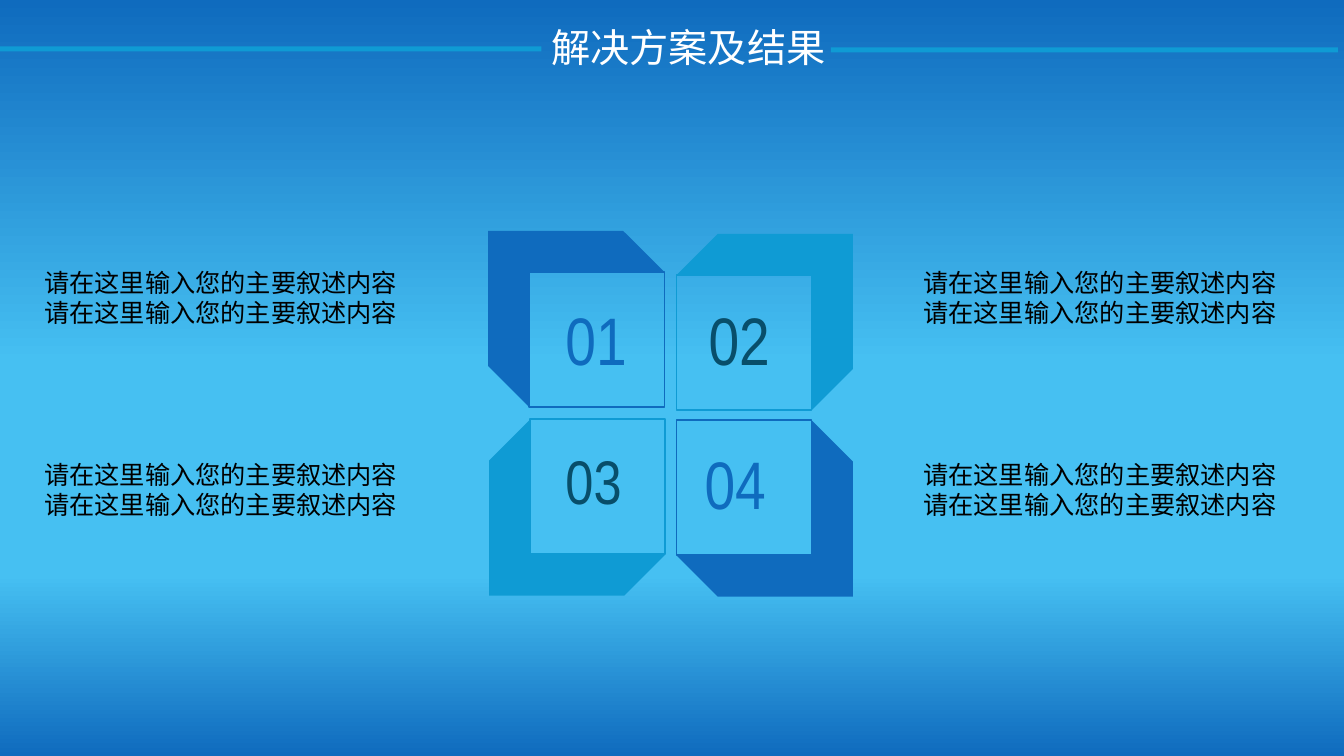
from lxml import etree
from pptx import Presentation
from pptx.dml.color import RGBColor
from pptx.enum.shapes import MSO_SHAPE
from pptx.oxml.ns import qn
from pptx.util import Inches, Pt

RECTANGLE = MSO_SHAPE.RECTANGLE
CJK_FONT = "Noto Sans CJK SC"
NUMERAL_FONT = "Arial Narrow"
BLUE, TEAL, DARK_TEAL = "0F6BBE", "0F9BD4", "084E6A"
BACKGROUND_STOPS = [(0, BLUE), (48, "46C0F2"), (76, "46C0F2"), (100, BLUE)]

BAND = 0.41      # thickness of a petal's folded band
WINDOW = 1.34    # side of a petal's open square
PETAL = BAND + WINDOW

# left, top, outer corner (right, bottom), band colour, numeral, its colour, size and offset
PETALS = [
    (4.84, 2.29, (0, 0), BLUE, "01", BLUE, 48, (0.67, 0.62)),
    (6.71, 2.32, (1, 0), TEAL, "02", DARK_TEAL, 48, (0.22, 0.59)),
    (4.85, 4.16, (0, 1), TEAL, "03", DARK_TEAL, 44, (0.66, 0.18)),
    (6.71, 4.17, (1, 1), BLUE, "04", BLUE, 48, (0.18, 0.17)),
]
CAPTION_COLUMNS = (0.34, 9.06)
CAPTION_ROWS = (2.6, 4.51)
CAPTION_LINES = ["请在这里输入您的主要叙述内容"] * 2


def color(hex_string):
    return RGBColor.from_string(hex_string)


def paint(shape, fill=None, line=None):
    shape.shadow.inherit = False
    if fill:
        shape.fill.solid()
        shape.fill.fore_color.rgb = color(fill)
    else:
        shape.fill.background()
    if line:
        shape.line.color.rgb = color(line)
        shape.line.width = Pt(1.25)
    else:
        shape.line.fill.background()


def add_rectangle(slide, box, **style):
    shape = slide.shapes.add_shape(RECTANGLE, *map(Inches, box))
    paint(shape, **style)


def add_text(slide, box, lines, size, font, ink, wrap=True):
    frame = slide.shapes.add_textbox(*map(Inches, box)).text_frame
    frame.word_wrap = wrap
    frame.text = "\n".join(lines)
    for paragraph in frame.paragraphs:
        run = paragraph.runs[0]
        run.font.size = Pt(size)
        run.font.name = font
        run.font.color.rgb = color(ink)
        east_asian = etree.SubElement(run.font._element, qn("a:ea"))
        east_asian.set("typeface", font)


def add_background(slide):
    fill = slide.background.fill
    fill.gradient()
    fill.gradient_angle = 270
    stop_list = slide.element.find(".//" + qn("a:gsLst"))
    for stop in list(stop_list):
        stop_list.remove(stop)
    for percent, hex_string in BACKGROUND_STOPS:
        stop = etree.SubElement(stop_list, qn("a:gs"), pos=str(percent * 1000))
        etree.SubElement(stop, qn("a:srgbClr"), val=hex_string)


def add_header(slide):
    add_rectangle(slide, (0, 0.46, 5.37, 0.05), fill=TEAL)
    add_rectangle(slide, (8.24, 0.47, 5.03, 0.05), fill=TEAL)
    add_text(slide, (5.37, 0.18, 3.84, 0.57), ["解决方案及结果"], 28, CJK_FONT, "FFFFFF")


def add_petal(slide, left, top, corner, band_color, numeral, ink, size, offset):
    """Folded band around the outer corner, open square inside it, and a numeral."""
    right, bottom = corner

    def place(x, y):
        """Mirror a top-left petal's point towards the outer corner."""
        return (Inches(left + (PETAL - x if right else x)),
                Inches(top + (PETAL - y if bottom else y)))

    outline = [place(*point) for point in (
        (0, 0), (0, WINDOW), (BAND, PETAL), (BAND, BAND), (PETAL, BAND), (WINDOW, 0))]
    builder = slide.shapes.build_freeform(*outline[0])
    builder.add_line_segments(outline[1:], close=True)
    paint(builder.convert_to_shape(), fill=band_color)

    window_left = left + (0 if right else BAND)
    window_top = top + (0 if bottom else BAND)
    add_rectangle(slide, (window_left, window_top, WINDOW, WINDOW), line=band_color)
    add_text(slide, (left + offset[0], top + offset[1], 0.86, 0.91), [numeral],
             size, NUMERAL_FONT, ink, wrap=False)


def add_captions(slide):
    for left in CAPTION_COLUMNS:
        for top in CAPTION_ROWS:
            add_text(slide, (left, top, 3.96, 1.07), CAPTION_LINES, 18, CJK_FONT, "000000")


def main():
    presentation = Presentation()
    presentation.slide_width = Inches(13.33)
    presentation.slide_height = Inches(7.5)
    slide = presentation.slides.add_slide(presentation.slide_layouts[6])
    add_background(slide)
    add_captions(slide)
    for petal in PETALS:
        add_petal(slide, *petal)
    add_header(slide)
    presentation.save("out.pptx")


if __name__ == "__main__":
    main()
